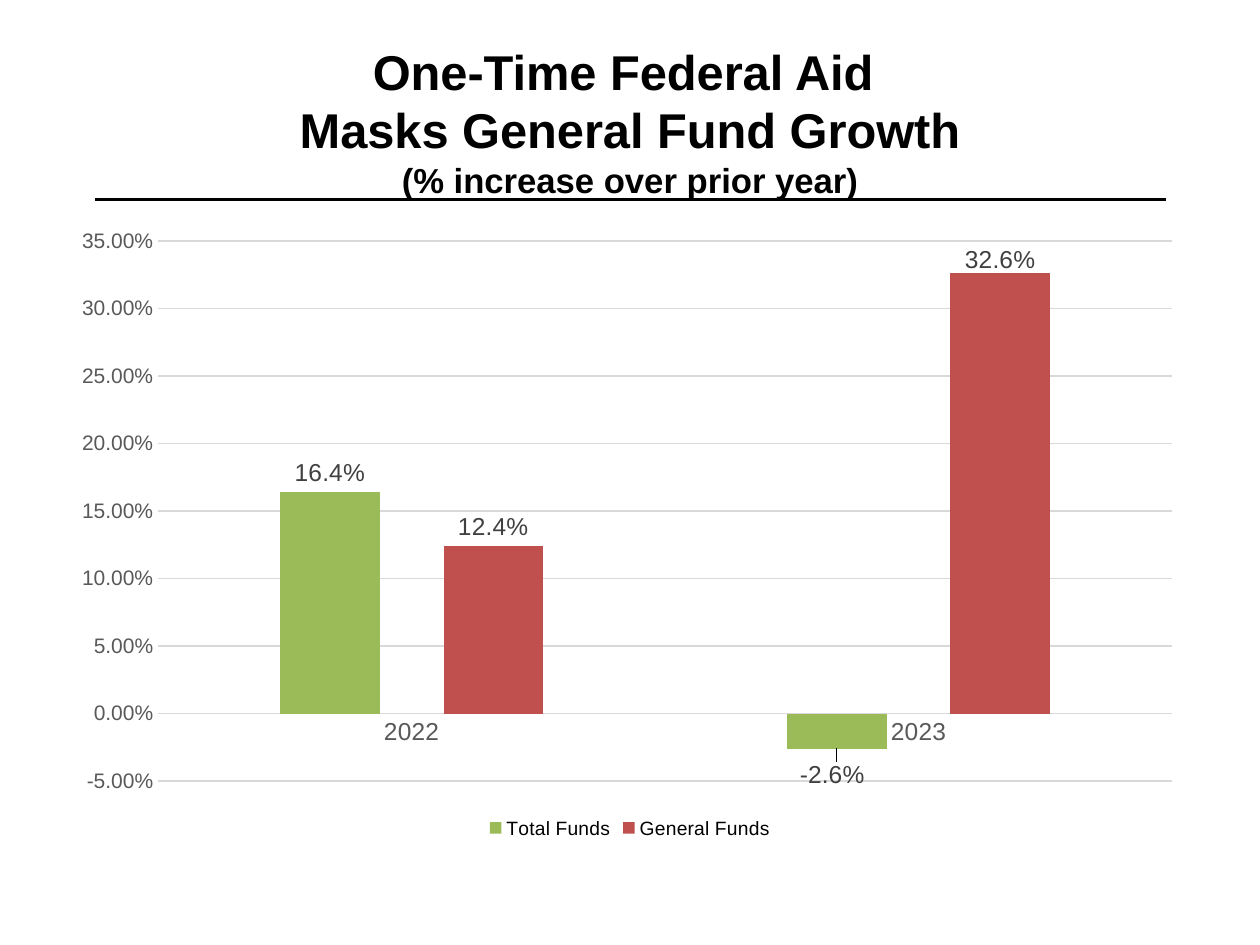
from pptx import Presentation
from pptx.chart.data import CategoryChartData
from pptx.dml.color import RGBColor
from pptx.enum.chart import XL_CHART_TYPE, XL_LABEL_POSITION, XL_LEGEND_POSITION, XL_TICK_MARK
from pptx.enum.shapes import MSO_CONNECTOR
from pptx.enum.text import MSO_ANCHOR, MSO_AUTO_SIZE, PP_ALIGN
from pptx.oxml import parse_xml
from pptx.oxml.ns import nsdecls, qn
from pptx.util import Inches, Pt
from lxml.etree import SubElement

BLACK = RGBColor(0x00, 0x00, 0x00)
GREEN = RGBColor(0x9B, 0xBB, 0x59)
BLUE = RGBColor(0x4F, 0x81, 0xBD)
RED = RGBColor(0xC0, 0x50, 0x4D)
DARK = RGBColor(0x40, 0x40, 0x40)
GRAY = RGBColor(0x59, 0x59, 0x59)
PALE = RGBColor(0xD9, 0xD9, 0xD9)


class Deck:
    """Hold the style and the current slide."""

    face = "Arial"

    def __init__(self):
        self.prs = Presentation()
        self.prs.slide_width, self.prs.slide_height = Inches(10), Inches(7.5)
        self.slide = self.prs.slides.add_slide(self.prs.slide_layouts[5])

    def style(self, font, size, color, bold=False):
        font.name, font.size, font.bold = self.face, Pt(size), bold
        font.color.rgb = color

    def title(self, box, lines):
        shape = self.slide.shapes.title
        shape.left, shape.top, shape.width, shape.height = map(Inches, box)
        frame = shape.text_frame
        frame.word_wrap = True
        frame.auto_size = MSO_AUTO_SIZE.NONE
        frame.vertical_anchor = MSO_ANCHOR.MIDDLE
        para = frame.paragraphs[0]
        para.alignment = PP_ALIGN.CENTER
        for i, (text, size) in enumerate(lines):
            if i:
                para.add_line_break()
            run = para.add_run()
            run.text = text
            self.style(run.font, size, BLACK, True)

    def rule(self, left, right, top, width):
        line = self.slide.shapes.add_connector(
            MSO_CONNECTOR.STRAIGHT, Inches(left), Inches(top), Inches(right), Inches(top))
        line.line.color.rgb = BLACK
        line.line.width = Pt(width)
        SubElement(line._element.spPr, qn("a:effectLst"))

    def axis(self, axis, size):
        axis.major_tick_mark = axis.minor_tick_mark = XL_TICK_MARK.NONE
        self.style(axis.tick_labels.font, size, GRAY)

    def place(self, node, spot, area, modes=""):
        for old in node.findall(qn("c:layout")):
            node.remove(old)
        sides = "".join(f'<c:{key} val="{val}"/>' for key, val in zip("xywh", area))
        node.insert(spot, parse_xml(
            f'<c:layout {nsdecls("c")}><c:manualLayout>{modes}{sides}'
            '</c:manualLayout></c:layout>'))

    def label(self, bars, shift):
        tags = bars.data_labels
        tags.show_value = True
        tags.number_format, tags.number_format_is_linked = "0.0%", False
        tags.position = XL_LABEL_POSITION.OUTSIDE_END
        self.style(tags.font, 14, DARK)
        tag = bars.points[1].data_label
        tag.position = XL_LABEL_POSITION.OUTSIDE_END
        self.style(tag.font, 14, DARK)
        self.place(tag._dLbl, 1, shift)

    def chart(self, box, area, cats, rows):
        data = CategoryChartData(number_format="0.0%")
        data.categories = cats
        for name, vals, _, _ in rows:
            data.add_series(name, vals)
        chart = self.slide.shapes.add_chart(
            XL_CHART_TYPE.COLUMN_CLUSTERED, *map(Inches, box), data).chart
        self.style(chart.font, 10, BLACK)
        chart.has_title = False
        self.place(chart._chartSpace.chart.plotArea, 0, area,
                   '<c:layoutTarget val="inner"/><c:xMode val="edge"/><c:yMode val="edge"/>')

        chart.has_legend = True
        chart.legend.position = XL_LEGEND_POSITION.BOTTOM
        chart.legend.include_in_layout = False
        self.style(chart.legend.font, 11, BLACK)

        self.axis(chart.category_axis, 14)
        self.axis(chart.value_axis, 12)
        scale = chart.value_axis
        scale.minimum_scale, scale.maximum_scale, scale.major_unit = -0.05, 0.35, 0.05
        scale.tick_labels.number_format = "0.00%"
        scale.tick_labels.number_format_is_linked = False
        scale.format.line.fill.background()
        for line in (chart.category_axis.format.line, scale.major_gridlines.format.line):
            line.color.rgb = PALE
            line.width = Pt(0.75)

        plot = chart.plots[0]
        plot.gap_width, plot.overlap, plot.vary_by_categories = 245, -64, False
        for bars, (_, vals, color, shift) in zip(plot.series, rows):
            bars.invert_if_negative = False
            bars.format.fill.solid()
            bars.format.fill.fore_color.rgb = color
            if vals:
                self.label(bars, shift)
            else:
                bars._element.remove(bars._element.find(qn("c:val")))


def main():
    deck = Deck()
    deck.rule(0.75, 9.25, 1.58, 1.75)
    deck.title((0.75, 0.5, 8.5, 0.92), [
        ("One-Time Federal Aid ", 27.9),
        ("Masks General Fund Growth", 27.9),
        ("(% increase over prior year)", 19.8),
    ])
    deck.chart((0.5, 1.75, 9, 4.95), (0.084, 0.033, 0.894, 0.866), ["2022", "2023"], [
        ("Total Funds", (0.164, -0.026), GREEN, (-0.004, 0.013)),
        ("General", (), BLUE, None),
        ("General Funds", (0.124, 0.326), RED, (0, 0.008)),
    ])
    deck.prs.save("out.pptx")


if __name__ == "__main__":
    main()
